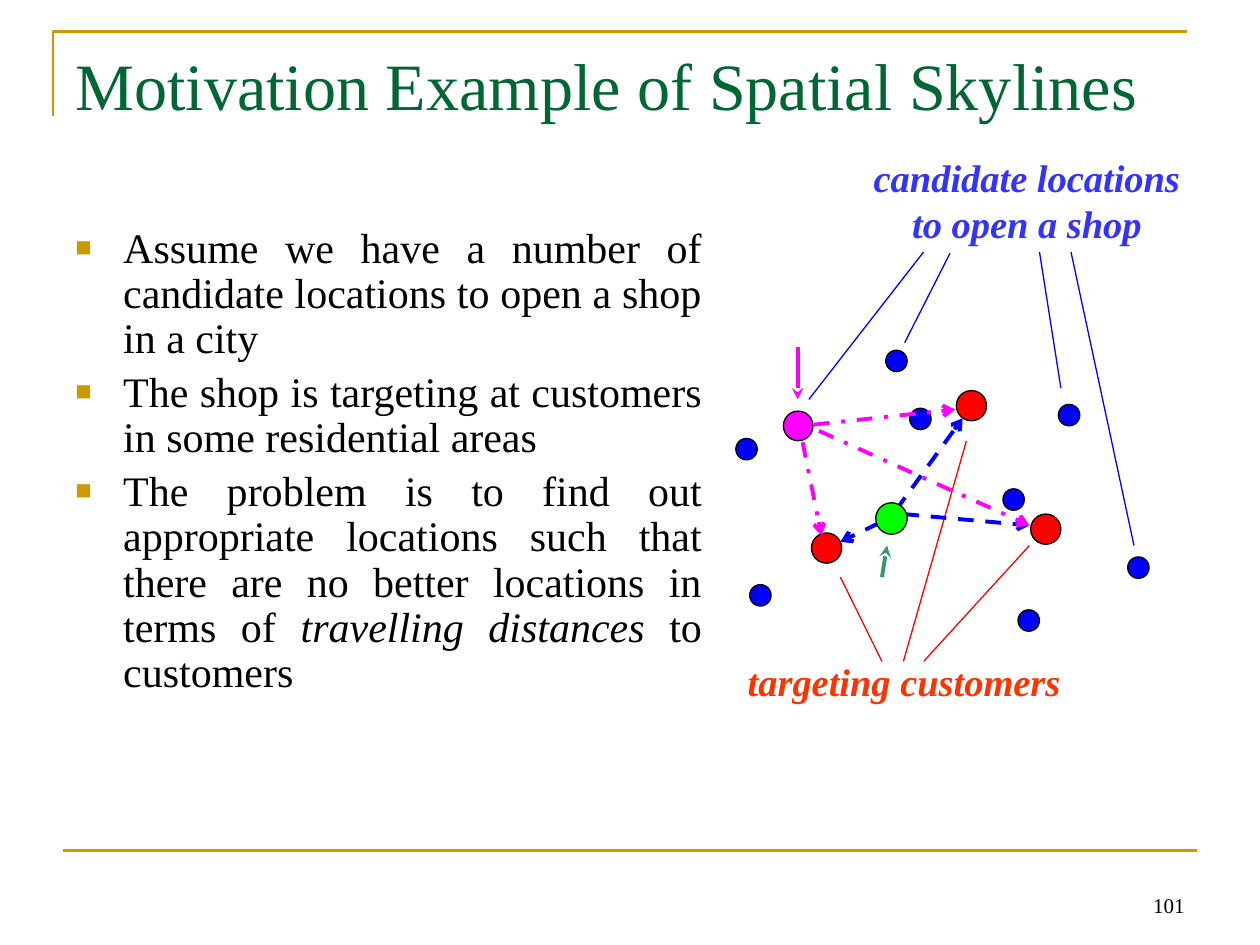
from dataclasses import dataclass

from lxml.etree import SubElement
from pptx import Presentation
from pptx.dml.color import RGBColor
from pptx.enum.dml import MSO_LINE
from pptx.enum.shapes import MSO_CONNECTOR, MSO_SHAPE
from pptx.enum.text import MSO_ANCHOR, PP_ALIGN
from pptx.oxml.ns import qn
from pptx.util import Inches, Pt


@dataclass(frozen=True)
class Theme:
    font: str = "Times New Roman"
    gold: str = "CC9900"
    title: str = "006633"
    ink: str = "000000"
    candidate: str = "0000FF"
    candidate_label: str = "3333FF"
    customer: str = "FF0000"
    customer_label: str = "FF3300"
    best: str = "00FF00"
    best_pointer: str = "339966"
    rival: str = "FF00FF"
    title_size: float = 37.8
    body_size: float = 24
    label_size: float = 22
    number_size: float = 12
    rule: float = 1.5
    thin: float = 0.75
    thick: float = 2.25


@dataclass(frozen=True)
class Box:
    left: float
    top: float
    width: float
    height: float

    def point(self, column, row):
        return Inches(self.left + column * CELL), Inches(self.top + row * CELL)

    def area(self, column, row, columns, rows):
        return Box(self.left + column * CELL, self.top + row * CELL, columns * CELL, rows * CELL)

    def frame(self):
        return [Inches(side) for side in (self.left, self.top, self.width, self.height)]


THEME = Theme()
CELL = 0.1
PAGE = Box(0, 0, 10, 7.5)

BULLETS = [
    [("Assume we have a number of candidate locations to open a shop in a city", False)],
    [("The shop is targeting at customers in some residential areas", False)],
    [
        ("The problem is to find out appropriate locations such that "
         "there are no better locations in terms of ", False),
        ("travelling distances", True),
        (" to customers", False),
    ],
]

CANDIDATES = [
    (13.15, 17.65), (26.85, 21.95), (32.35, 34.05), (23.65, 38.25), (22.45, 28.65),
    (12.75, 30.05), (2.35, 36.25), (1.25, 24.65), (5.55, 22.65), (15.05, 22.25),
]
CUSTOMERS = [(19.1, 21.2), (7.6, 32.5), (25, 31)]
RIVAL = (5.35, 22.8)
BEST = (12.75, 30.15)
CANDIDATE_LEADERS = [
    ((13.8, 16.2), (17.4, 9.1)), ((6.2, 20.7), (15.3, 9)),
    ((26.2, 19.8), (24.5, 9)), ((32, 32.3), (27, 9)),
]
CUSTOMER_LEADERS = [
    ((8.7, 34.8), (12, 41.5)), ((23.7, 32.3), (15.3, 41.5)), ((18.7, 24), (13.7, 41.5)),
]
BEST_TRIPS = [
    ((13.1, 29.5), (18.4, 22.2)), ((11.8, 30.5), (8.7, 32)), ((13.7, 29.8), (23.7, 30.7)),
]
RIVAL_TRIPS = [
    ((5.7, 24.1), (7.2, 31.5)), ((6.6, 22.7), (17.8, 21.5)), ((7, 23.2), (23.7, 30.7)),
]


def color(value):
    return RGBColor.from_string(value)


def add_span(para, text, size, ink, bold=False, italic=False):
    span = para.add_run()
    span.text = text
    span.font.name = THEME.font
    span.font.size = Pt(size)
    span.font.bold = bold
    span.font.italic = italic
    span.font.color.rgb = color(ink)


def add_text_frame(shapes, box, wrap=True, anchor=MSO_ANCHOR.TOP):
    frame = shapes.add_textbox(*box.frame()).text_frame
    frame.word_wrap = wrap
    frame.vertical_anchor = anchor
    return frame


def add_line(shapes, box, start, end, ink, width, dash=None, arrow=None):
    line = shapes.add_connector(MSO_CONNECTOR.STRAIGHT, *box.point(*start), *box.point(*end))
    line.line.color.rgb = color(ink)
    line.line.width = Pt(width)
    if dash:
        line.line.dash_style = dash
    properties = line._element.spPr
    if arrow:
        SubElement(properties.find(qn("a:ln")), qn("a:tailEnd"), type=arrow)
    SubElement(properties, qn("a:effectLst"))


def add_dot(shapes, box, center, size, fill):
    column, row = center
    area = box.area(column - size / 2, row - size / 2, size, size)
    dot = shapes.add_shape(MSO_SHAPE.OVAL, *area.frame())
    dot.shadow.inherit = False
    dot.fill.solid()
    dot.fill.fore_color.rgb = color(fill)
    dot.line.color.rgb = color(THEME.ink)
    dot.line.width = Pt(THEME.thin)


def add_label(shapes, box, lines, ink):
    frame = add_text_frame(shapes, box, wrap=False)
    for index, text in enumerate(lines):
        para = frame.add_paragraph() if index else frame.paragraphs[0]
        para.alignment = PP_ALIGN.CENTER
        add_span(para, text, THEME.label_size, ink, bold=True, italic=True)


def add_rules(page, box):
    builder = page.shapes.build_freeform(*box.point(4.2, 9.2))
    builder.add_line_segments([box.point(4.2, 2.5), box.point(94.2, 2.5)], close=False)
    corner = builder.convert_to_shape()
    corner.shadow.inherit = False
    corner.fill.background()
    corner.line.color.rgb = color(THEME.gold)
    corner.line.width = Pt(THEME.rule)
    add_line(page.shapes, box, (5, 67.5), (95, 67.5), THEME.gold, THEME.rule)


def add_page_number(page, box):
    para = add_text_frame(page.shapes, box, anchor=MSO_ANCHOR.BOTTOM).paragraphs[0]
    para.alignment = PP_ALIGN.RIGHT
    add_span(para, "101", THEME.number_size, THEME.ink)


def fill_title(page, box):
    title = page.shapes.title
    title.left, title.top, title.width, title.height = box.frame()
    title.text_frame.vertical_anchor = MSO_ANCHOR.TOP
    para = title.text_frame.paragraphs[0]
    para.alignment = PP_ALIGN.LEFT
    add_span(para, "Motivation Example of Spatial Skylines", THEME.title_size, THEME.title)


def add_bullets(page, box):
    frame = add_text_frame(page.shapes, box)
    for index, spans in enumerate(BULLETS):
        para = frame.add_paragraph() if index else frame.paragraphs[0]
        para.alignment = PP_ALIGN.JUSTIFY
        para.line_spacing = 0.9
        para.space_before = Pt(THEME.body_size * 0.2)
        settings = para._p.get_or_add_pPr()
        settings.set("marL", str(Inches(0.38)))
        settings.set("indent", str(Inches(-0.38)))
        SubElement(SubElement(settings, qn("a:buClr")), qn("a:srgbClr"), val=THEME.gold)
        SubElement(settings, qn("a:buSzPct"), val="65000")
        SubElement(settings, qn("a:buFont"), typeface=THEME.font)
        SubElement(settings, qn("a:buChar"), char="■")
        for text, italic in spans:
            add_span(para, text, THEME.body_size, THEME.ink, italic=italic)


def add_map(page, box):
    shapes = page.shapes
    for centers, size, fill in (
        (CANDIDATES, 1.7, THEME.candidate), (CUSTOMERS, 2.4, THEME.customer),
    ):
        dots = shapes.add_group_shape().shapes
        for center in centers:
            add_dot(dots, box, center, size, fill)
    for area, lines, ink, leaders, leader_ink in (
        (box.area(10.3, 0.7, 26.4, 8.3), ["candidate locations", "to open a shop"],
         THEME.candidate_label, CANDIDATE_LEADERS, THEME.candidate),
        (box.area(0.3, 40.7, 26.9, 4.7), ["targeting customers"],
         THEME.customer_label, CUSTOMER_LEADERS, THEME.customer),
    ):
        callout = shapes.add_group_shape().shapes
        add_label(callout, area, lines, ink)
        for start, end in leaders:
            add_line(callout, box, start, end, leader_ink, THEME.thin)
    for start, end in BEST_TRIPS:
        add_line(shapes, box, start, end, THEME.candidate, THEME.thick, MSO_LINE.DASH, "arrow")
    add_dot(shapes, box, RIVAL, 2.35, THEME.rival)
    add_line(shapes, box, (5.3, 16.5), (5.3, 20.7), THEME.rival, THEME.thick, arrow="stealth")
    add_dot(shapes, box, BEST, 2.5, THEME.best)
    add_line(shapes, box, (12, 34.8), (12.4, 32.3), THEME.best_pointer, THEME.thick, arrow="stealth")
    for start, end in RIVAL_TRIPS:
        add_line(shapes, box, start, end, THEME.rival, THEME.thick, MSO_LINE.DASH_DOT, "arrow")


def main():
    deck = Presentation()
    deck.slide_width, deck.slide_height = Inches(PAGE.width), Inches(PAGE.height)
    page = deck.slides.add_slide(deck.slide_layouts[5])
    add_rules(page, PAGE)
    add_page_number(page, PAGE.area(71.7, 68.3, 23.3, 5))
    fill_title(page, PAGE.area(5, 3, 90, 12.5))
    add_bullets(page, PAGE.area(5, 17.5, 51.7, 49.5))
    add_map(page, PAGE.area(58, 11, 37, 46))
    deck.save("out.pptx")


if __name__ == "__main__":
    main()
